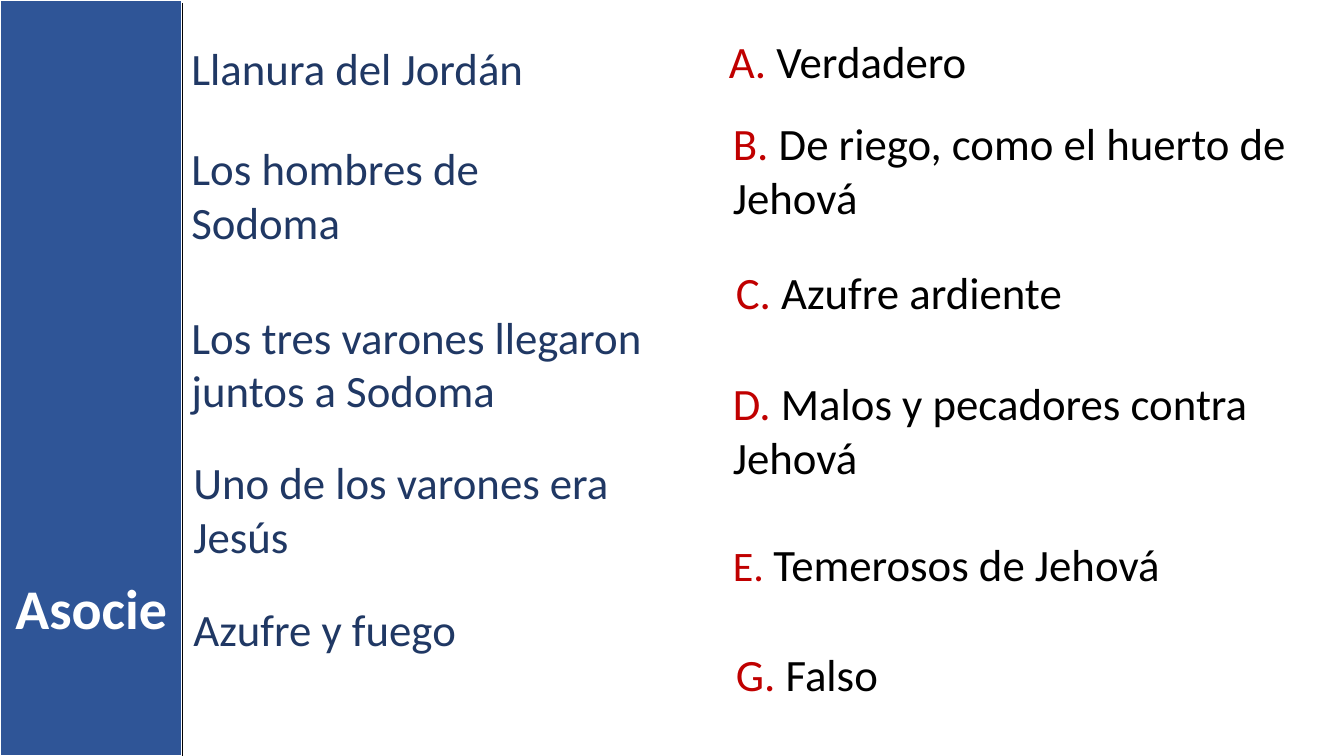
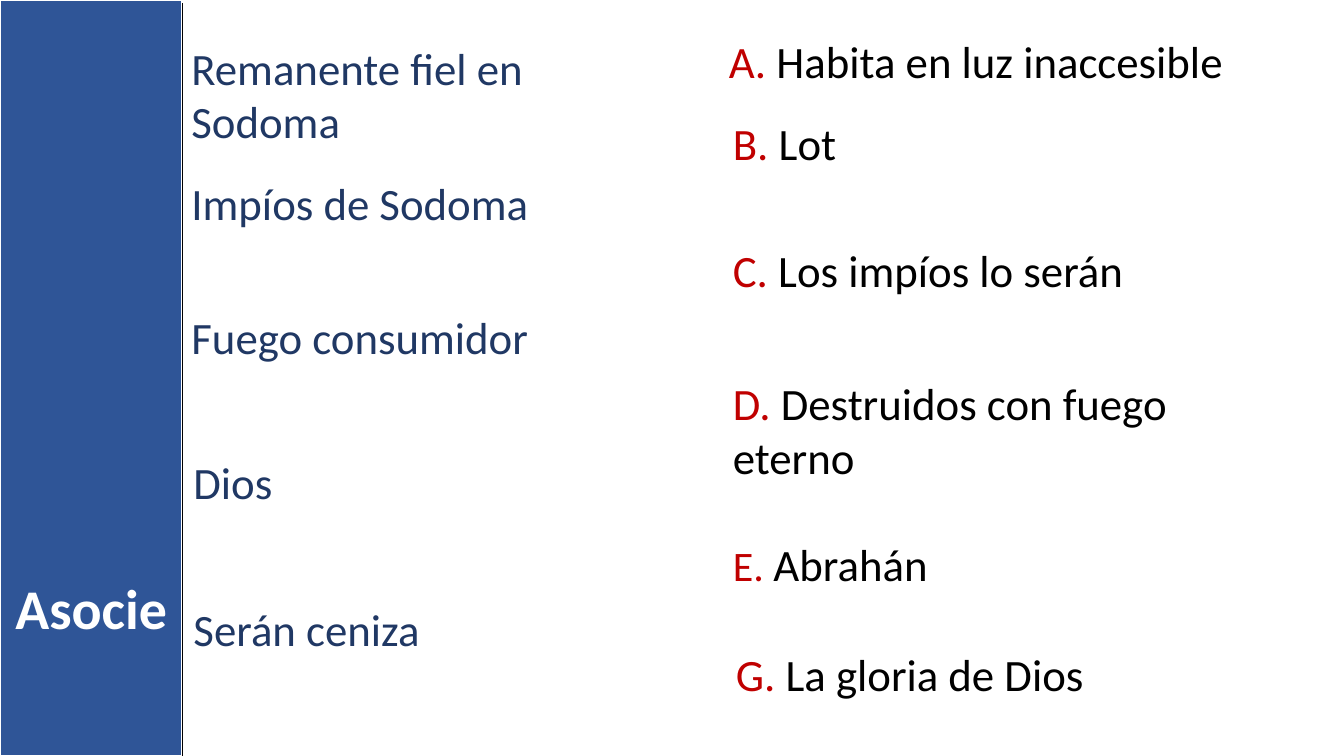
from lxml.etree import SubElement
from pptx import Presentation
from pptx.dml.color import RGBColor
from pptx.enum.shapes import MSO_CONNECTOR, MSO_SHAPE
from pptx.enum.text import MSO_ANCHOR, MSO_AUTO_SIZE, PP_ALIGN
from pptx.oxml.ns import qn
from pptx.util import Pt

EMU_PER_PX = 9144
SLIDE_WIDTH, SLIDE_HEIGHT = 1333, 750
FONT = "Calibri"
BAND_BLUE, TERM_BLUE = "2F5597", "203864"
LETTER_RED, BLACK, WHITE = "C00000", "000000", "FFFFFF"
BAND_BOX = (0, 0, 181, SLIDE_HEIGHT)
TERMS_ORIGIN = (180, 35)
ANSWERS_ORIGIN = (713, 29)
ONE_LINE_HEIGHT, LINE_STEP = 64, 54
LETTER_SIZES = {"E": 30}

EXERCISES = [
    {
        "terms": [
            ("Llanura del Jordán", 0, 0, 525, 1),
            ("Los hombres de Sodoma", 0, 100, 462, 2),
            ("Los tres varones llegaron juntos a Sodoma", 0, 267, 492, 2),
            ("Uno de los varones era Jesús", 2, 411, 460, 2),
            ("Azufre y fuego", 2, 557, 441, 1),
        ],
        "answers": [
            ("A", "Verdadero", 0, 0, 605, 1),
            ("B", "De riego, como el huerto de Jehová", 4, 81, 592, 2),
            ("C", "Azufre ardiente", 7, 229, 574, 1),
            ("D", "Malos y pecadores contra Jehová", 4, 339, 580, 2),
            ("E", "Temerosos de Jehová", 4, 499, 553, 1),
            ("G", "Falso", 7, 608, 559, 1),
        ],
    },
    {
        "terms": [
            ("Remanente fiel en Sodoma", 0, 0, 443, 2),
            ("Impíos de Sodoma", 0, 134, 462, 1),
            ("Fuego consumidor", 0, 267, 492, 1),
            ("Dios", 2, 411, 460, 1),
            ("Serán ceniza", 2, 557, 441, 1),
        ],
        "answers": [
            ("A", "Habita en luz inaccesible", 0, 0, 605, 1),
            ("B", "Lot", 4, 81, 592, 1),
            ("C", "Los impíos lo serán", 4, 207, 574, 1),
            ("D", "Destruidos con fuego eterno", 4, 339, 580, 2),
            ("E", "Abrahán", 4, 499, 553, 1),
            ("G", "La gloria de Dios", 7, 608, 559, 1),
        ],
    },
]


def px(*lengths):
    """Turn pixel lengths into a list of EMU lengths."""
    return [length * EMU_PER_PX for length in lengths]


def color(hex_text):
    """Turn a hex string into a colour."""
    return RGBColor.from_string(hex_text)


def set_font(font, size, hex_text, bold=False):
    """Format a paragraph or run font."""
    font.name = FONT
    font.size = Pt(size)
    font.bold = bold
    font.color.rgb = color(hex_text)


def add_text_line(slide, box, lines):
    """Add a wrapping text box and return its first paragraph."""
    left, top, width = box
    height = ONE_LINE_HEIGHT + LINE_STEP * (lines - 1)
    shape = slide.shapes.add_textbox(*px(left, top, width, height))
    shape.text_frame.word_wrap = True
    shape.text_frame.auto_size = MSO_AUTO_SIZE.SHAPE_TO_FIT_TEXT
    return shape.text_frame.paragraphs[0]


def add_band(slide, box, title_text):
    """Place the side band, its title and the line along its right edge."""
    left, top, width, height = box
    title = slide.shapes.title
    band = slide.shapes.add_shape(MSO_SHAPE.RECTANGLE, *px(*box))
    band.shadow.inherit = False
    band.fill.solid()
    band.fill.fore_color.rgb = color(BAND_BLUE)
    band.line.color.rgb = color(WHITE)
    band.line.width = Pt(1.5)
    title.element.addprevious(band.element)

    title.left, title.top, title.width, title.height = px(left, top + 564, width, 77)
    title.text = title_text
    title.text_frame.word_wrap = True
    title.text_frame.auto_size = MSO_AUTO_SIZE.NONE
    title.text_frame.vertical_anchor = MSO_ANCHOR.TOP
    paragraph = title.text_frame.paragraphs[0]
    paragraph.alignment = PP_ALIGN.CENTER
    set_font(paragraph.font, 40, WHITE, bold=True)

    right = left + width
    edge = slide.shapes.add_connector(
        MSO_CONNECTOR.STRAIGHT, *px(right, top + 3, right, top + height)
    )
    edge.line.color.rgb = color(BLACK)
    edge.line.width = Pt(1)
    SubElement(edge.element.spPr, qn("a:effectLst"))


def add_terms(slide, origin, terms):
    """Place the terms to match, relative to the column origin."""
    left, top = origin
    for text, shift, drop, width, lines in terms:
        paragraph = add_text_line(slide, (left + shift, top + drop, width), lines)
        paragraph.text = text
        set_font(paragraph.font, 32, TERM_BLUE)


def add_answers(slide, origin, answers):
    """Place the lettered answers, relative to the column origin."""
    left, top = origin
    for letter, text, shift, drop, width, lines in answers:
        paragraph = add_text_line(slide, (left + shift, top + drop, width), lines)
        letter_size = LETTER_SIZES.get(letter, 32)
        for part, size, hex_text in (
            (f"{letter}. ", letter_size, LETTER_RED),
            (text, 32, BLACK),
        ):
            run = paragraph.add_run()
            run.text = part
            set_font(run.font, size, hex_text)


def add_exercise(presentation, exercise):
    """Add one matching exercise slide."""
    slide = presentation.slides.add_slide(presentation.slide_layouts[5])
    add_band(slide, BAND_BOX, "Asocie")
    add_terms(slide, TERMS_ORIGIN, exercise["terms"])
    add_answers(slide, ANSWERS_ORIGIN, exercise["answers"])


def main():
    """Build and save the presentation."""
    presentation = Presentation()
    presentation.slide_width, presentation.slide_height = px(SLIDE_WIDTH, SLIDE_HEIGHT)
    for exercise in EXERCISES:
        add_exercise(presentation, exercise)
    presentation.save("out.pptx")


if __name__ == "__main__":
    main()
